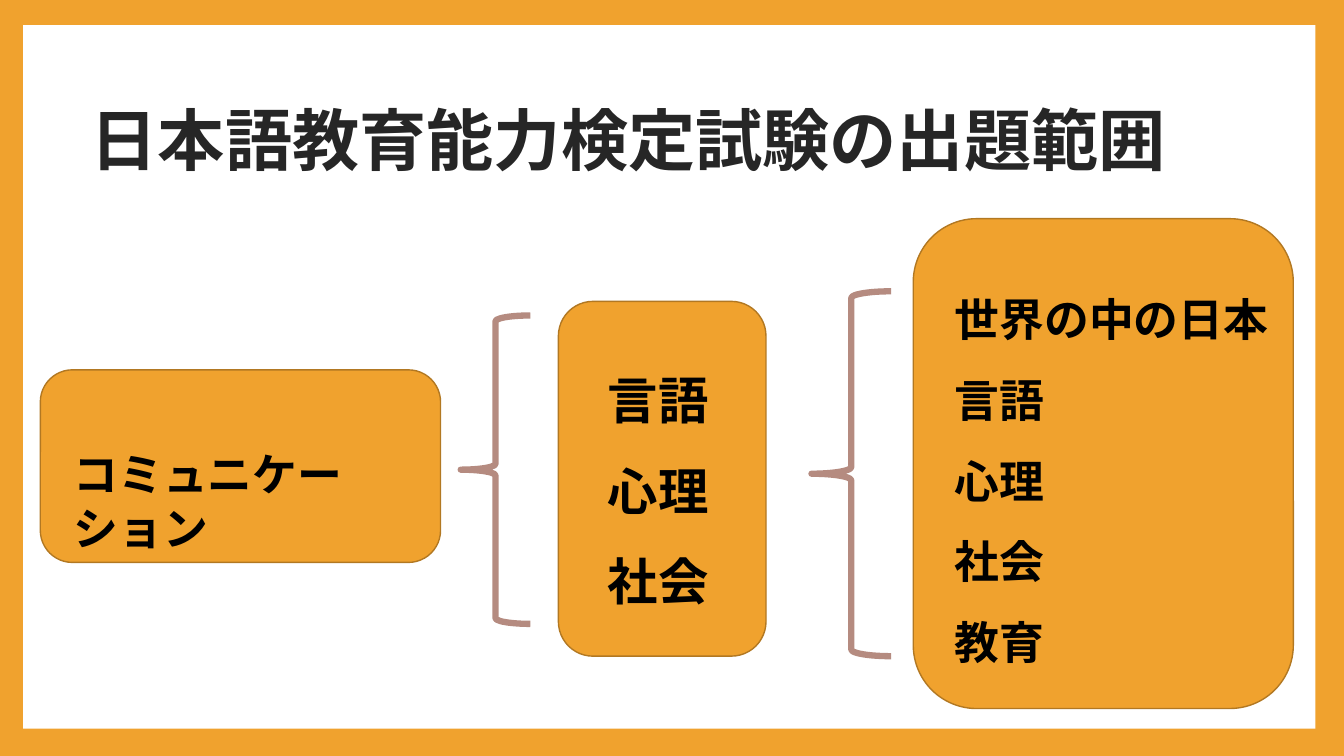
from dataclasses import dataclass
from typing import Optional

from lxml import etree
from pptx import Presentation
from pptx.dml.color import RGBColor
from pptx.enum.lang import MSO_LANGUAGE_ID
from pptx.enum.shapes import MSO_SHAPE
from pptx.enum.text import MSO_ANCHOR, MSO_AUTO_SIZE, PP_ALIGN
from pptx.oxml.ns import qn
from pptx.util import Emu, Inches, Pt

RECTANGLE = MSO_SHAPE.RECTANGLE
ROUNDED = MSO_SHAPE.ROUNDED_RECTANGLE
BRACE = MSO_SHAPE.LEFT_BRACE
TOP, BOTTOM = MSO_ANCHOR.TOP, MSO_ANCHOR.BOTTOM
LEFT = PP_ALIGN.LEFT
FIXED = MSO_AUTO_SIZE.NONE
JAPANESE = MSO_LANGUAGE_ID.JAPANESE
TWO_CONTENT = 3

WIDTH, HEIGHT = Inches(13.333), Inches(7.5)
FONT = "Calibri"
COLOURS = {
    "amber": "F0A22E",
    "edge": "B27822",
    "brace": "B58B80",
    "paper": "FFFFFF",
    "heading": "262626",
    "text": "000000",
}


@dataclass(frozen=True)
class Area:
    """Left, top, width and height in percent of the slide."""
    left: float
    top: float
    width: float
    height: float

    def emu(self) -> tuple[Emu, Emu, Emu, Emu]:
        return (
            Emu(int(WIDTH * self.left / 100)),
            Emu(int(HEIGHT * self.top / 100)),
            Emu(int(WIDTH * self.width / 100)),
            Emu(int(HEIGHT * self.height / 100)),
        )


@dataclass(frozen=True)
class Figure:
    preset: MSO_SHAPE
    area: Area
    fill: Optional[str] = None
    line: Optional[str] = None
    weight: float = 1


@dataclass(frozen=True)
class Topics:
    area: Area
    words: tuple[str, ...]
    size: int
    spacing: float = 1.5


FIGURES = (
    Figure(RECTANGLE, Area(0, 0, 100, 100), "amber"),
    Figure(RECTANGLE, Area(1.73, 3.33, 96.15, 93.07), "paper"),
    Figure(ROUNDED, Area(3, 48.93, 29.78, 25.47), "amber", "edge"),
    Figure(ROUNDED, Area(41.55, 39.87, 15.45, 46.93), "amber", "edge"),
    Figure(ROUNDED, Area(67.95, 28.93, 28.28, 64.8), "amber", "edge"),
    Figure(BRACE, Area(34.28, 41.73, 5.18, 40.8), line="brace", weight=4.5),
    Figure(BRACE, Area(60.38, 38.53, 5.93, 48.27), line="brace", weight=4.5),
)
HEADING = Topics(Area(6, 9.33, 84.38, 15.2), ("日本語教育能力検定試験の出題範囲",), 48, 0.9)
COMMUNICATION = Topics(Area(4.73, 58.4, 27.3, 8.53), ("コミュニケーション",), 32, 1)
THREE_FIELDS = Topics(Area(44.48, 44.13, 10.73, 36.67), ("言語", "心理", "社会"), 36)
FIVE_FIELDS = Topics(
    Area(70.28, 34.4, 25.05, 54.27),
    ("世界の中の日本", "言語", "心理", "社会", "教育"),
    32,
)


def colour(name: str) -> RGBColor:
    return RGBColor.from_string(COLOURS[name])


def draw(slide, figure: Figure) -> None:
    shape = slide.shapes.add_shape(figure.preset, *figure.area.emu())
    shape.shadow.inherit = False
    if figure.fill:
        shape.fill.solid()
        shape.fill.fore_color.rgb = colour(figure.fill)
    else:
        shape.fill.background()
    if figure.line:
        shape.line.color.rgb = colour(figure.line)
        shape.line.width = Pt(figure.weight)
    else:
        shape.line.fill.background()


def write(holder, topics: Topics, *, ink: str = "text", anchor: MSO_ANCHOR = TOP) -> None:
    holder.left, holder.top, holder.width, holder.height = topics.area.emu()
    frame = holder.text_frame
    frame.word_wrap = True
    frame.auto_size = FIXED
    frame.vertical_anchor = anchor
    frame.text = "\n".join(topics.words)
    for paragraph in frame.paragraphs:
        paragraph.alignment = LEFT
        paragraph.line_spacing = topics.spacing
        paragraph.space_before = Pt(0)
        properties = paragraph._p.get_or_add_pPr()
        properties.set("marL", "0")
        properties.set("indent", "0")
        etree.SubElement(properties, qn("a:buNone"))
        font = paragraph.runs[0].font
        font.name = FONT
        font.size = Pt(topics.size)
        font.bold = True
        font.color.rgb = colour(ink)
        font.language_id = JAPANESE


def main() -> None:
    deck = Presentation()
    deck.slide_width, deck.slide_height = WIDTH, HEIGHT
    slide = deck.slides.add_slide(deck.slide_layouts[TWO_CONTENT])
    heading, three_fields, five_fields = slide.placeholders

    for figure in FIGURES:
        draw(slide, figure)
    for holder in (three_fields, five_fields, heading):
        slide.shapes._spTree.append(holder._element)

    write(heading, HEADING, ink="heading", anchor=BOTTOM)
    write(three_fields, THREE_FIELDS)
    write(five_fields, FIVE_FIELDS)
    communication = slide.shapes.add_textbox(*COMMUNICATION.area.emu())
    write(communication, COMMUNICATION)
    deck.save("out.pptx")


if __name__ == "__main__":
    main()
